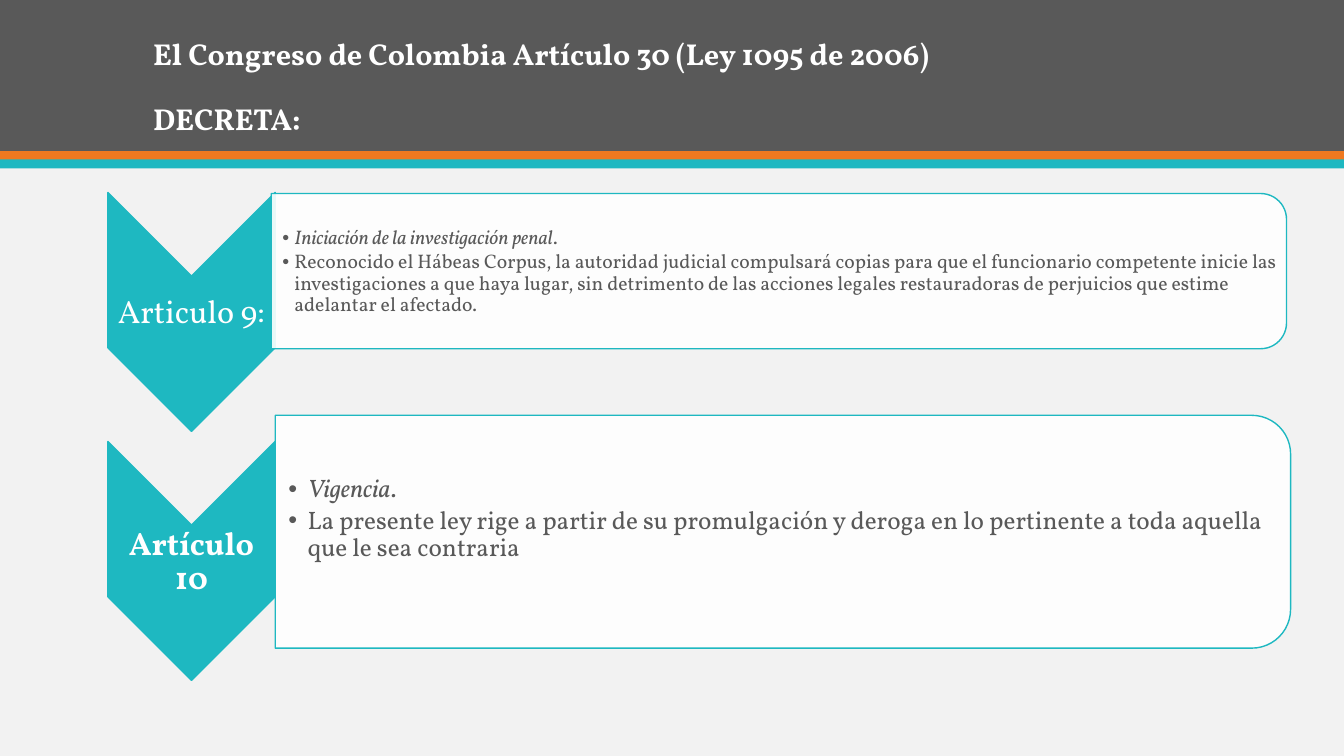
from lxml.etree import SubElement
from pptx import Presentation
from pptx.dml.color import RGBColor
from pptx.enum.shapes import MSO_SHAPE
from pptx.enum.text import MSO_ANCHOR, PP_ALIGN
from pptx.oxml.ns import qn
from pptx.util import Inches, Pt

FONT = "Vollkorn"
GRAY, ORANGE, TEAL, WHITE, PALE = "595959", "EF7920", "1EB8C1", "FFFFFF", "F2F2F2"
SLIDE_W, SLIDE_H = 13.33, 7.5

HEADING = ["El Congreso de Colombia Artículo 30 (Ley 1095 de 2006)", "DECRETA:"]
BANDS = [(0, 1.5, GRAY), (1.5, 0.09, ORANGE), (1.58, 0.09, TEAL)]  # top, height, colour

# Boxes are left, top, width, height as seen on the slide
ARTICLES = [
    {
        "label": "Articulo 9:", "bold": False,
        "title": "Iniciación de la investigación penal",
        "body": "Reconocido el Hábeas Corpus, la autoridad judicial compulsará copias "
                "para que el funcionario competente inicie las investigaciones a que haya "
                "lugar, sin detrimento de las acciones legales restauradoras de perjuicios "
                "que estime adelantar el afectado.",
        "size": 14, "inset": 0.11, "indent": 0.12,
        "panel": (2.69, 1.92, 10.07, 1.54), "text": (2.69, 2, 10, 1.39),
    },
    {
        "label": "Artículo 10", "bold": True,
        "title": "Vigencia",
        "body": "La presente ley rige a partir de su promulgación y deroga en lo pertinente "
                "a toda aquella que le sea contraria",
        "size": 18, "inset": 0.14, "indent": 0.19,
        "panel": (2.73, 4.12, 10.07, 2.31), "text": (2.72, 4.11, 9.96, 2.08),
    },
]
CHEVRON_LEFT, CHEVRON_TOP, CHEVRON_W, CHEVRON_H = 1.07, 1.91, 1.66, 2.37
CHEVRON_STEP = 2.47
LABEL_DROP, LABEL_H = 0.84, 0.71


def color(hex_code):
    return RGBColor.from_string(hex_code)


def add_box(slide, kind, box, fill, line=None):
    shape = slide.shapes.add_shape(kind, *map(Inches, box))
    shape.shadow.inherit = False
    shape.fill.solid()
    shape.fill.fore_color.rgb = color(fill)
    if line:
        shape.line.color.rgb = color(line)
        shape.line.width = Pt(1)
    else:
        shape.line.fill.background()
    return shape


def add_turned(slide, kind, box, fill):
    """Add a shape turned by 90 degrees that covers the given visible box."""
    left, top, width, height = box
    shift = (width - height) / 2
    shape = add_box(slide, kind, (left + shift, top - shift, height, width), fill, TEAL)
    shape.rotation = 90
    return shape


def add_text_frame(slide, box, anchor, insets):
    frame = slide.shapes.add_textbox(*map(Inches, box)).text_frame
    frame.word_wrap = True
    frame.vertical_anchor = anchor
    (frame.margin_left, frame.margin_top,
     frame.margin_right, frame.margin_bottom) = map(Inches, insets)
    return frame


def next_paragraph(frame, index):
    paragraph = frame.add_paragraph() if index else frame.paragraphs[0]
    paragraph.line_spacing = 0.9
    return paragraph


def add_run(paragraph, text, size, hex_code, bold=False, italic=False):
    run = paragraph.add_run()
    run.text = text
    run.font.name = FONT
    run.font.size = Pt(size)
    run.font.bold = bold
    run.font.italic = italic
    run.font.color.rgb = color(hex_code)


def add_bullet(paragraph, indent):
    properties = paragraph._p.get_or_add_pPr()
    properties.set("marL", str(Inches(indent)))
    properties.set("indent", str(-Inches(indent)))
    SubElement(properties, qn("a:buFont"), typeface="Arial")
    SubElement(properties, qn("a:buChar"), char="•")


def add_heading(slide):
    frame = add_text_frame(slide, (1.42, 0.28, 10.5, 1.13), MSO_ANCHOR.BOTTOM,
                           (0.1, 0.05, 0.1, 0.05))
    for index, line in enumerate(HEADING):
        paragraph = next_paragraph(frame, index)
        paragraph.space_before = Pt(23 * index)
        add_run(paragraph, line, 21.6, WHITE, bold=True)


def add_article(slide, article, top):
    add_turned(slide, MSO_SHAPE.CHEVRON, (CHEVRON_LEFT, top, CHEVRON_W, CHEVRON_H), TEAL)
    label_box = (CHEVRON_LEFT, top + LABEL_DROP, CHEVRON_W, LABEL_H)
    label = next_paragraph(
        add_text_frame(slide, label_box, MSO_ANCHOR.MIDDLE, (0.02,) * 4), 0)
    label.alignment = PP_ALIGN.CENTER
    add_run(label, article["label"], 23, WHITE, bold=article["bold"])

    panel = add_turned(slide, MSO_SHAPE.ROUND_2_SAME_RECTANGLE, article["panel"], WHITE)
    panel_color = panel._element.spPr.find(qn("a:solidFill")).find(qn("a:srgbClr"))
    SubElement(panel_color, qn("a:alpha"), val="90000")

    size = article["size"]
    frame = add_text_frame(slide, article["text"], MSO_ANCHOR.MIDDLE,
                           (article["inset"], 0.01, 0.01, 0.01))
    bullets = [[(article["title"], True), (".", False)], [(article["body"], False)]]
    for index, runs in enumerate(bullets):
        paragraph = next_paragraph(frame, index)
        paragraph.space_after = Pt(round(size * 0.15))
        add_bullet(paragraph, article["indent"])
        for text, italic in runs:
            add_run(paragraph, text, size, GRAY, italic=italic)


def main():
    deck = Presentation()
    deck.slide_width, deck.slide_height = Inches(SLIDE_W), Inches(SLIDE_H)
    slide = deck.slides.add_slide(deck.slide_layouts[6])
    slide.background.fill.solid()
    slide.background.fill.fore_color.rgb = color(PALE)
    for top, height, fill in BANDS:
        add_box(slide, MSO_SHAPE.RECTANGLE, (0, top, SLIDE_W, height), fill)
    add_heading(slide)
    for index, article in enumerate(ARTICLES):
        add_article(slide, article, CHEVRON_TOP + index * CHEVRON_STEP)
    deck.save("out.pptx")


if __name__ == "__main__":
    main()
